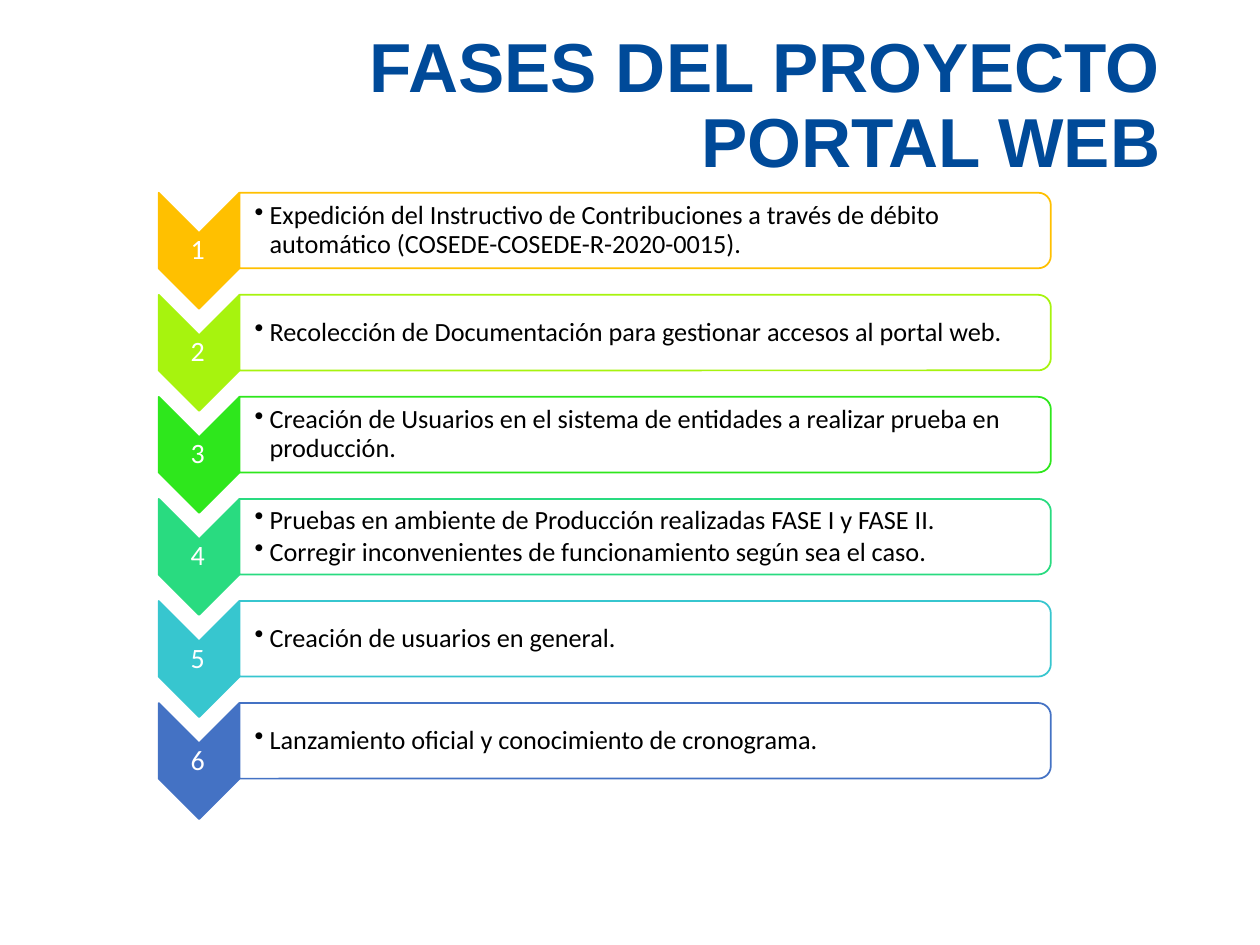
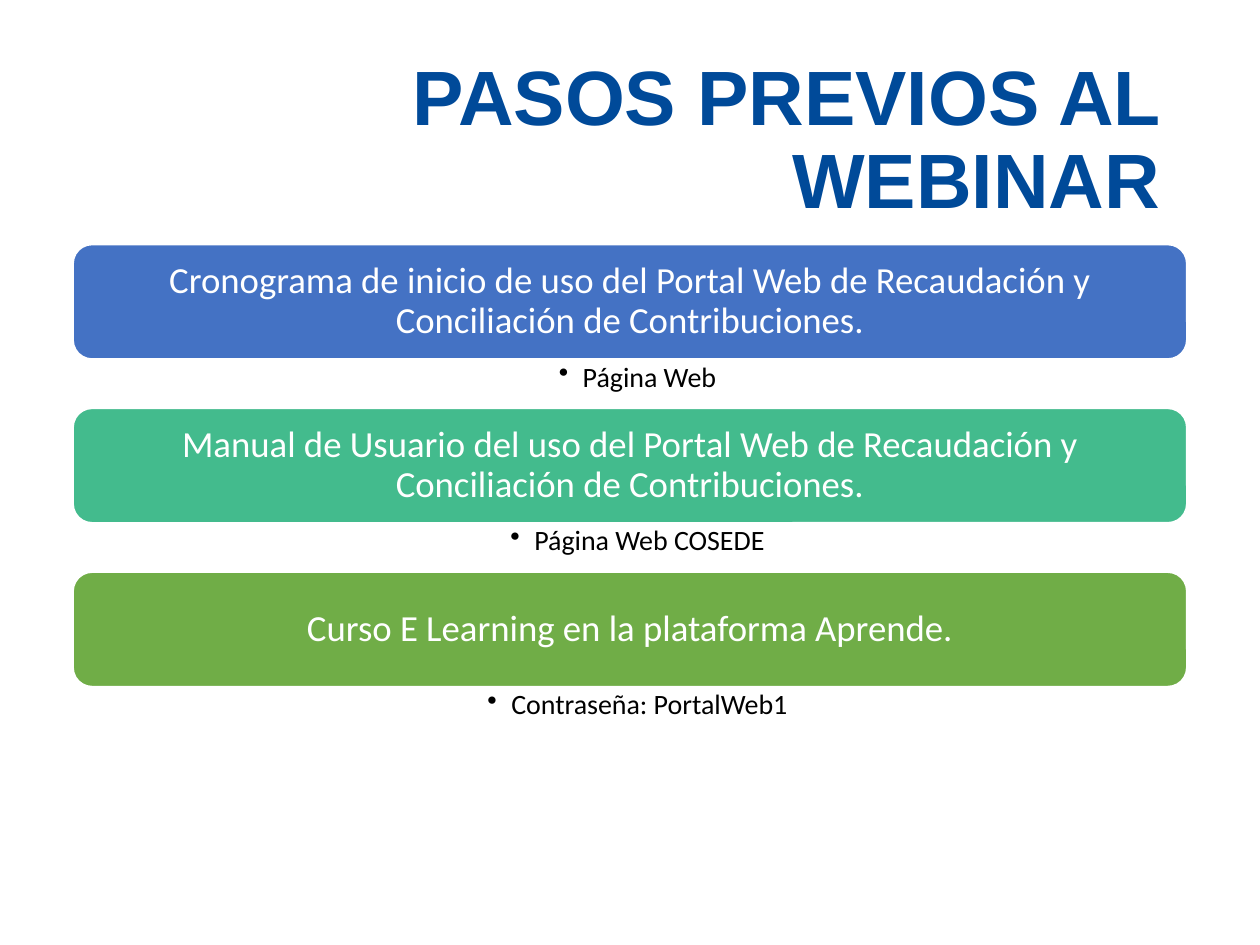
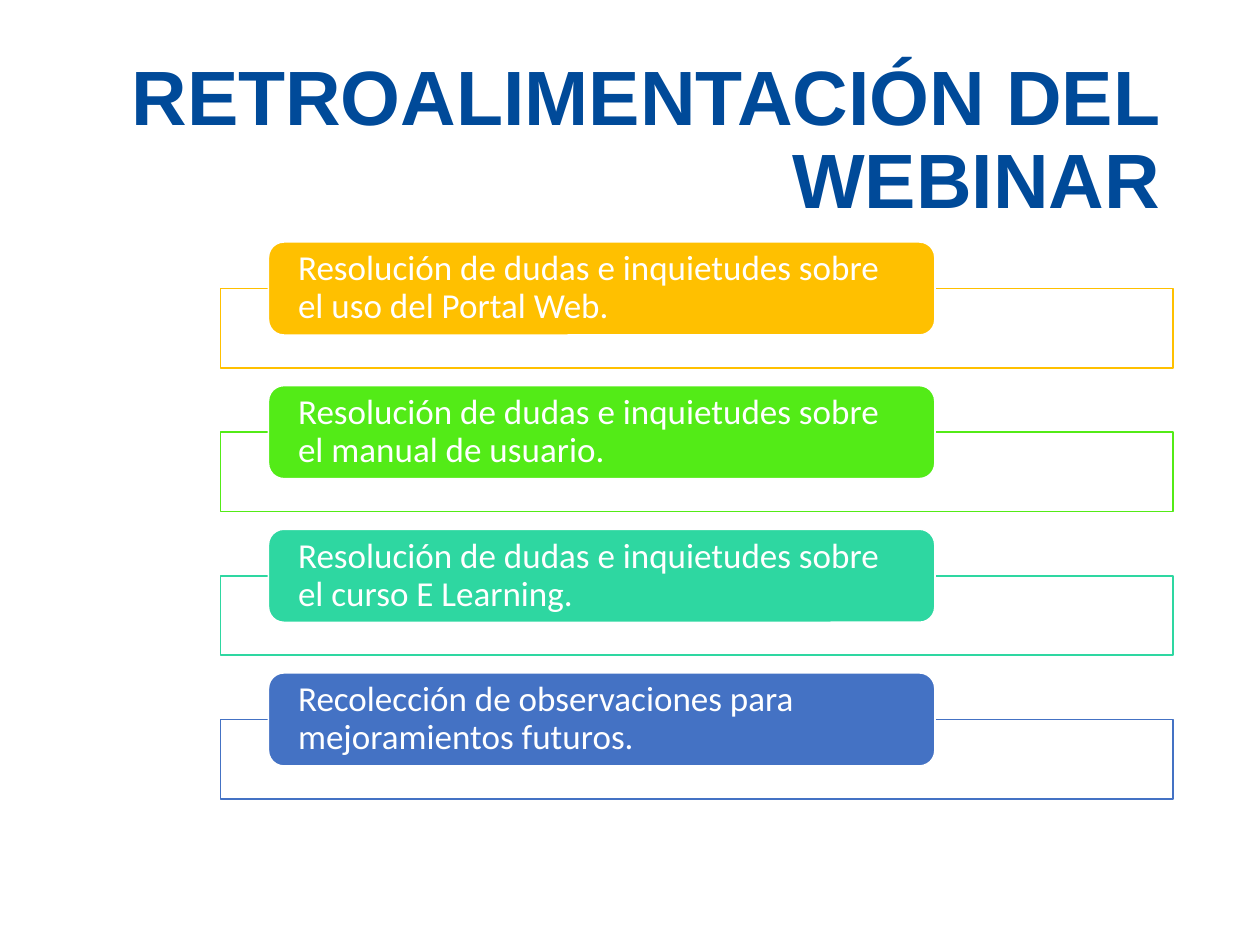
from pptx import Presentation
from pptx.dml.color import RGBColor
from pptx.enum.shapes import MSO_SHAPE
from pptx.enum.text import MSO_ANCHOR, MSO_AUTO_SIZE, PP_ALIGN
from pptx.oxml.xmlchemy import OxmlElement
from pptx.util import Inches, Pt

CHEVRON = MSO_SHAPE.CHEVRON
TAB_CARD = MSO_SHAPE.ROUND_2_SAME_RECTANGLE
ROUNDED = MSO_SHAPE.ROUNDED_RECTANGLE
RECTANGLE = MSO_SHAPE.RECTANGLE
LEFT, CENTER, RIGHT = PP_ALIGN.LEFT, PP_ALIGN.CENTER, PP_ALIGN.RIGHT
TOP, MIDDLE = MSO_ANCHOR.TOP, MSO_ANCHOR.MIDDLE
TITLE_ONLY = 5

COLORS = {
    "title": "004A99", "white": "FFFFFF", "black": "000000",
    "amber": "FFC000", "lime": "A7F30E", "green": "2EE71C",
    "mint": "29DB80", "cyan": "37C6CF", "blue": "4472C4",
    "jade": "43BB8D", "leaf": "70AD47", "neon": "53EB17", "aqua": "2ED7A1",
}

PHASES = [
    ("amber", ["Expedición del Instructivo de Contribuciones a través de débito "
               "automático (COSEDE-COSEDE-R-2020-0015)."]),
    ("lime", ["Recolección de Documentación para gestionar accesos al portal web."]),
    ("green", ["Creación de Usuarios en el sistema de entidades a realizar prueba en producción."]),
    ("mint", ["Pruebas en ambiente de Producción realizadas FASE I y FASE II.",
              "Corregir inconvenientes de funcionamiento según sea el caso."]),
    ("cyan", ["Creación de usuarios en general."]),
    ("blue", ["Lanzamiento oficial y conocimiento de cronograma."]),
]
PREPARATIONS = [
    ("blue", "Cronograma de inicio de uso del Portal Web de Recaudación y "
             "Conciliación de Contribuciones.", "Página Web"),
    ("jade", "Manual de Usuario del uso del Portal Web de Recaudación y "
             "Conciliación de Contribuciones.", "Página Web COSEDE"),
    ("leaf", "Curso E Learning en la plataforma Aprende.", "Contraseña: PortalWeb1"),
]
FEEDBACK = [
    ("amber", "Resolución de dudas e inquietudes sobre el uso del Portal Web."),
    ("neon", "Resolución de dudas e inquietudes sobre el manual de usuario."),
    ("aqua", "Resolución de dudas e inquietudes sobre el curso E Learning."),
    ("blue", "Recolección de observaciones para mejoramientos futuros."),
]


def rgb(color):
    return RGBColor.from_string(COLORS[color])


def write(holder, lines, size, color="white", font="Calibri", bold=False, align=LEFT,
          anchor=MIDDLE, insets=(0.1, 0.05, 0.1, 0.05), hanging=0, gap=0):
    """Fill a shape with paragraphs; a hanging indent in inches makes them bulleted."""
    frame = holder.text_frame
    frame.word_wrap = True
    frame.auto_size = MSO_AUTO_SIZE.NONE
    frame.vertical_anchor = anchor
    (frame.margin_left, frame.margin_top,
     frame.margin_right, frame.margin_bottom) = map(Inches, insets)
    for index, line in enumerate(lines):
        paragraph = frame.add_paragraph() if index else frame.paragraphs[0]
        if hanging:
            properties = paragraph._p.get_or_add_pPr()
            properties.set("marL", str(Inches(hanging)))
            properties.set("indent", str(-Inches(hanging)))
            bullet = OxmlElement("a:buChar")
            bullet.set("char", "•")
            properties.append(bullet)
        paragraph.alignment = align
        paragraph.line_spacing = 0.9
        paragraph.space_after = Pt(gap)
        run = paragraph.add_run()
        run.text = line
        run.font.size, run.font.name, run.font.bold = Pt(size), font, bold
        run.font.color.rgb = rgb(color)


def add_text(slide, box, lines, size, **style):
    write(slide.shapes.add_textbox(*map(Inches, box)), lines, size, **style)


def add_block(slide, preset, box, fill, line):
    block = slide.shapes.add_shape(preset, *map(Inches, box))
    block.shadow.inherit = False
    block.fill.solid()
    block.fill.fore_color.rgb = rgb(fill)
    block.line.color.rgb = rgb(line)
    block.line.width = Pt(1)
    return block


def add_turned_block(slide, preset, center, size, fill, line):
    """Place a block, turned a quarter clockwise, around its center."""
    (x, y), (width, height) = center, size
    box = (x - width / 2, y - height / 2, width, height)
    add_block(slide, preset, box, fill, line).rotation = 90


def add_titled_slide(deck, title, top=0.4, height=1.45, size=44):
    slide = deck.slides.add_slide(deck.slide_layouts[TITLE_ONLY])
    heading = slide.shapes.title
    heading.left, heading.top, heading.width, heading.height = map(
        Inches, (0.69, top, 8.62, height))
    write(heading, [title], size, color="title", font="Arial", bold=True, align=RIGHT)
    return slide


def add_phases(deck):
    slide = add_titled_slide(deck, "FASES DEL PROYECTO PORTAL WEB", 0.18, 1.35, 39.6)
    for index, (color, tasks) in enumerate(PHASES):
        middle = 1.83 + index * 0.81
        arrow_middle = middle + 0.16
        add_turned_block(slide, CHEVRON, (1.58, arrow_middle), (0.92, 0.64), color, color)
        add_text(slide, (1.25, arrow_middle - 0.14, 0.64, 0.28), [str(index + 1)], 16,
                 align=CENTER, insets=[0.01] * 4)
        add_turned_block(slide, TAB_CARD, (5.12, middle), (0.6, 6.44), "white", color)
        add_text(slide, (1.9, middle - 0.27, 6.41, 0.54), tasks, 15, color="black",
                 insets=(0.12, 0.01, 0.01, 0.01), hanging=0.12, gap=2.25)


def add_preparations(deck):
    slide = add_titled_slide(deck, "PASOS PREVIOS AL WEBINAR")
    left, width, height = 0.58, 8.84, 0.91
    for index, (color, step, place) in enumerate(PREPARATIONS):
        top = 1.94 + index * 1.3
        banner = add_block(slide, ROUNDED, (left, top, width, height), color, "white")
        write(banner, [step], 21, align=CENTER, insets=[0.09] * 4)
        add_text(slide, (left, top + height, width, 0.38), [place], 16, color="black",
                 align=CENTER, anchor=TOP, insets=(0.28, 0.03, 0.16, 0.03), hanging=0.19)


def add_feedback(deck):
    slide = add_titled_slide(deck, "RETROALIMENTACIÓN DEL WEBINAR")
    for index, (color, topic) in enumerate(FEEDBACK):
        top = 1.92 + index * 1.14
        add_block(slide, RECTANGLE, (1.75, top + 0.37, 7.56, 0.63), "white", color)
        label = add_block(slide, ROUNDED, (2.13, top, 5.29, 0.74), color, "white")
        write(label, [topic], 20, insets=(0.2, 0, 0.2, 0))


def main():
    deck = Presentation()
    deck.slide_width, deck.slide_height = Inches(10), Inches(7.5)
    add_phases(deck)
    add_preparations(deck)
    add_feedback(deck)
    deck.save("out.pptx")


if __name__ == "__main__":
    main()
